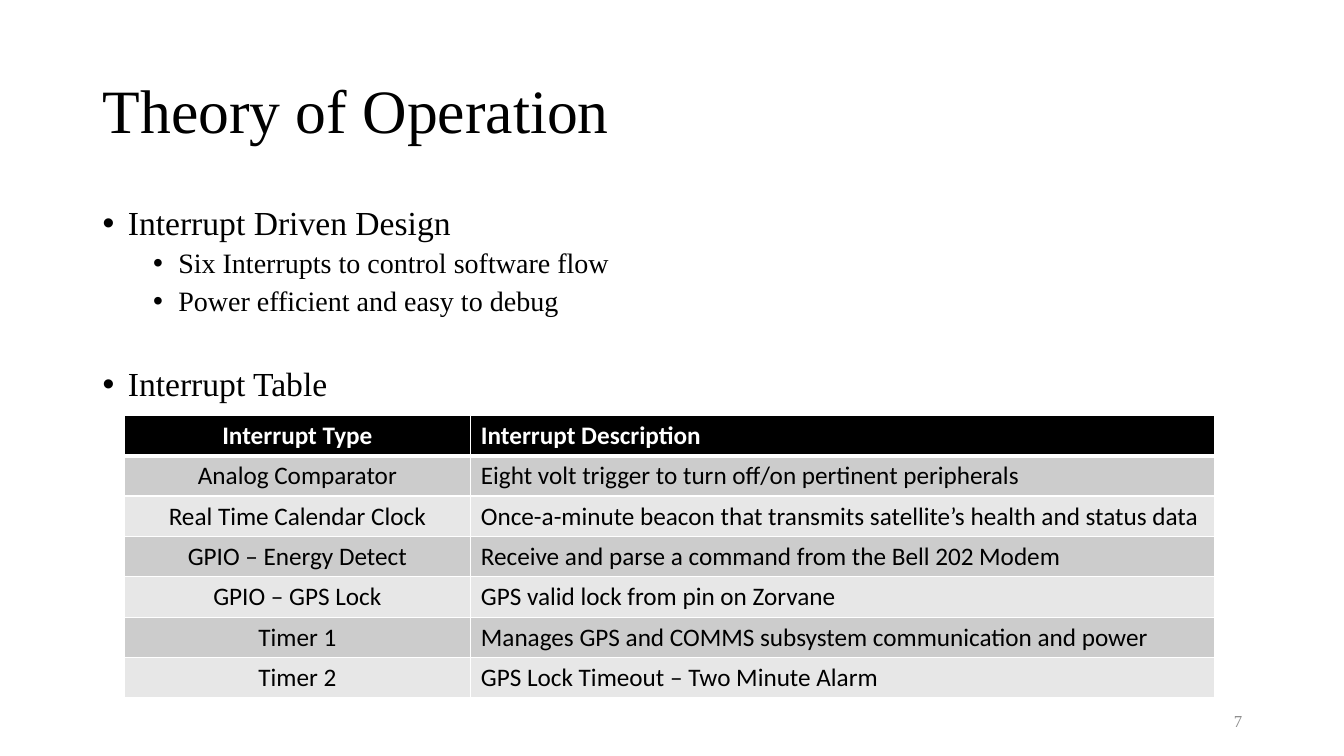
from lxml import etree
from pptx import Presentation
from pptx import util as u
from pptx.dml.color import RGBColor
from pptx.enum import text
from pptx.oxml.ns import qn

EMU_PER_PX = 9144  # 100 px to the inch


def px(length):
    return u.Emu(length * EMU_PER_PX)


def colour(value):
    return RGBColor.from_string(value)


class SlideBuilder:
    serif = "Times New Roman"
    sans = "Calibri"
    black, white, grey = "000000", "FFFFFF", "8C8C8C"
    bands = ("CCCCCC", "E7E7E7")

    def __init__(self, presentation):
        self.slide = presentation.slides.add_slide(presentation.slide_layouts[6])

    def format_runs(self, paragraph, size, font, fill, bold=False):
        for run in paragraph.runs:
            run.font.size = u.Pt(size)
            run.font.name = font
            run.font.bold = bold
            run.font.color.rgb = colour(fill)

    def text_frame(self, left, top, width, height, anchor):
        shape = self.slide.shapes.add_textbox(px(left), px(top), px(width), px(height))
        shape.text_frame.word_wrap = True
        shape.text_frame.vertical_anchor = anchor
        return shape.text_frame

    def label(self, words, box, size, fill, align=text.PP_ALIGN.LEFT, spacing=1.0):
        frame = self.text_frame(*box, text.MSO_ANCHOR.MIDDLE)
        frame.text = words
        paragraph = frame.paragraphs[0]
        paragraph.alignment = align
        paragraph.line_spacing = spacing
        self.format_runs(paragraph, size, self.serif, fill)

    def bullets(self, items, box):
        frame = self.text_frame(*box, text.MSO_ANCHOR.TOP)
        frame.text = "\n".join(words for words, level, before in items)
        for paragraph, (words, level, before) in zip(frame.paragraphs, items):
            paragraph.level = level
            paragraph.line_spacing = 0.9
            paragraph.space_before = u.Pt(before)
            self.format_runs(paragraph, 20 if level else 24, self.serif, self.black)
            properties = paragraph._p.get_or_add_pPr()
            properties.set("marL", str(px(25 + 50 * level)))
            properties.set("indent", str(px(-25)))
            etree.SubElement(properties, qn("a:buFont"), typeface="Arial")
            etree.SubElement(properties, qn("a:buChar"), char="•")

    def cell_borders(self, cell, bottom_width):
        properties = cell._tc.get_or_add_tcPr()
        widths = {"L": 1, "R": 1, "T": 1, "B": bottom_width}
        for position, (side, width) in enumerate(widths.items()):
            line = etree.Element(qn(f"a:ln{side}"), w=str(u.Pt(width)))
            fill = etree.SubElement(line, qn("a:solidFill"))
            etree.SubElement(fill, qn("a:srgbClr"), val=self.white)
            properties.insert(position, line)

    def table(self, rows, left, top, column_widths, row_height):
        frame = self.slide.shapes.add_table(
            len(rows), len(column_widths), px(left), px(top),
            px(sum(column_widths)), px(row_height * len(rows)))
        table = frame.table
        for column, width in zip(table.columns, column_widths):
            column.width = px(width)
        for i, row in enumerate(rows):
            header = i == 0
            table.rows[i].height = px(row_height)
            for j, words in enumerate(row):
                cell = table.cell(i, j)
                cell.text = words
                cell.fill.solid()
                cell.fill.fore_color.rgb = colour(
                    self.black if header else self.bands[(i - 1) % 2])
                paragraph = cell.text_frame.paragraphs[0]
                paragraph.alignment = text.PP_ALIGN.LEFT if j else text.PP_ALIGN.CENTER
                self.format_runs(paragraph, 18, self.sans,
                                 self.white if header else self.black, header)
                # A heavier rule parts the header from the body
                self.cell_borders(cell, 3 if i == 0 else 1)
                if i == 1:
                    cell._tc.tcPr.find(qn("a:lnT")).set("w", str(u.Pt(3)))


def main():
    presentation = Presentation()
    presentation.slide_width, presentation.slide_height = px(1333), px(750)
    builder = SlideBuilder(presentation)

    # Title
    builder.label("Theory of Operation", (92, 40, 1150, 145), 44, builder.black,
                  spacing=0.9)

    # Bullets: words, level, space before in points
    builder.bullets([
        ("Interrupt Driven Design", 0, 10),
        ("Six Interrupts to control software flow", 1, 5),
        ("Power efficient and easy to debug", 1, 5),
        ("Interrupt Table", 0, 36),
    ], (92, 200, 1150, 476))

    # Slide number
    builder.label("7", (942, 695, 300, 40), 12, builder.grey, text.PP_ALIGN.RIGHT)

    # Interrupt table
    builder.table([
        ("Interrupt Type", "Interrupt Description"),
        ("Analog Comparator", "Eight volt trigger to turn off/on pertinent peripherals"),
        ("Real Time Calendar Clock",
         "Once-a-minute beacon that transmits satellite’s health and status data"),
        ("GPIO – Energy Detect", "Receive and parse a command from the Bell 202 Modem"),
        ("GPIO – GPS Lock", "GPS valid lock from pin on Zorvane"),
        ("Timer 1", "Manages GPS and COMMS subsystem communication and power"),
        ("Timer 2", "GPS Lock Timeout – Two Minute Alarm"),
    ], 123, 412, (344, 738), 40)

    presentation.save("out.pptx")


if __name__ == "__main__":
    main()
